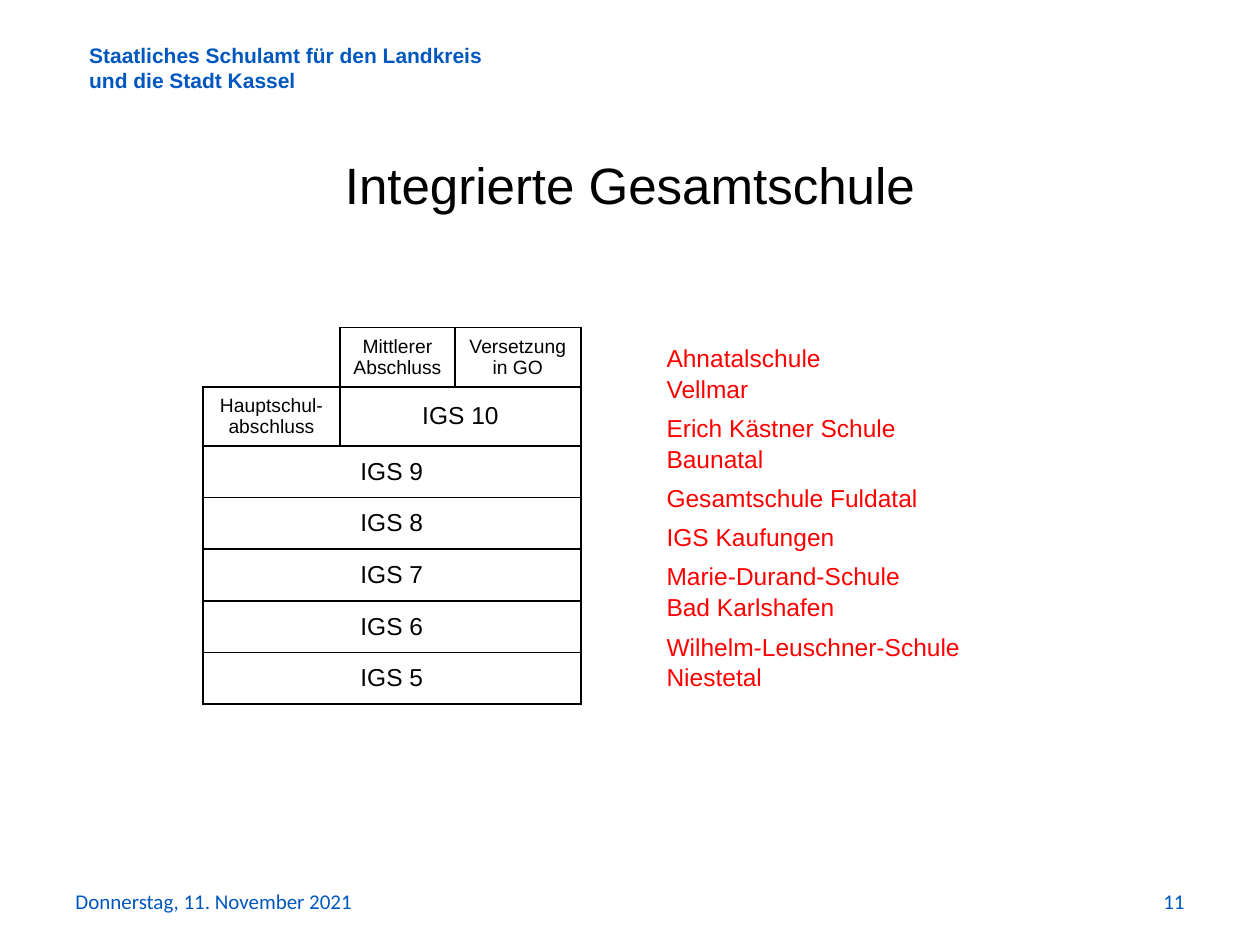
from dataclasses import dataclass

from lxml.etree import SubElement
from pptx import Presentation
from pptx.dml.color import RGBColor
from pptx.enum.text import MSO_ANCHOR, PP_ALIGN
from pptx.oxml.ns import qn
from pptx.util import Inches, Pt


@dataclass(frozen=True)
class Theme:
    font: str = "Arial"
    foot: str = "Calibri"
    blue: str = "0057C0"
    red: str = "FF0000"
    black: str = "000000"
    title: float = 29.2
    body: float = 14
    label: float = 11
    small: float = 12


T = Theme()
OFFICE = ["Staatliches Schulamt für den Landkreis", "und die Stadt Kassel"]
SCHOOLS = [
    ["Ahnatalschule", "Vellmar"],
    ["Erich Kästner Schule", "Baunatal"],
    ["Gesamtschule Fuldatal"],
    ["IGS Kaufungen"],
    ["Marie-Durand-Schule", "Bad Karlshafen"],
    ["Wilhelm-Leuschner-Schule", "Niestetal"],
]


def write(frame, text, size=T.body, color=T.black, font=T.font, bold=False,
          align=PP_ALIGN.LEFT, anchor=MSO_ANCHOR.TOP, gap=0, line=None):
    """Write groups of lines; gap is the space between groups."""
    frame.word_wrap = True
    frame.vertical_anchor = anchor
    groups = [[text]] if isinstance(text, str) else text
    first = True
    for group in groups:
        for i, words in enumerate(group):
            para = frame.paragraphs[0] if first else frame.add_paragraph()
            para.alignment = align
            para.space_before = Pt(gap if i == 0 and not first else 0)
            if line:
                para.line_spacing = line
            run = para.add_run()
            run.text = words
            run.font.size = Pt(size)
            run.font.name = font
            run.font.bold = bold
            run.font.color.rgb = RGBColor.from_string(color)
            first = False


def add_text(slide, box, text, **form):
    shape = slide.shapes.add_textbox(*map(Inches, box))
    write(shape.text_frame, text, **form)
    return shape.text_frame


def add_title(slide, box, text):
    title = slide.shapes.title
    title.left, title.top, title.width, title.height = map(Inches, box)
    write(title.text_frame, text, size=T.title, align=PP_ALIGN.CENTER)


def add_footer(slide, box):
    left, top, width, height = box
    form = dict(size=T.small, color=T.blue, font=T.foot,
                anchor=MSO_ANCHOR.MIDDLE)
    add_text(slide, (left, top, 3.08, height),
             "Donnerstag, 11. November 2021", **form)
    add_text(slide, (left + width - 2.33, top, 2.33, height), "11",
             align=PP_ALIGN.RIGHT, **form)


def add_schools(slide, box):
    frame = add_text(slide, box, SCHOOLS, color=T.red, gap=4.8, line=1.05)
    frame.margin_left = frame.margin_right = Inches(0.21)
    frame.margin_top = frame.margin_bottom = Inches(0.11)


def set_edges(cell, edges):
    props = cell._tc.get_or_add_tcPr()
    # Borders come before the fill in the cell properties
    for i, side in enumerate("LRTB"):
        edge = SubElement(props, qn(f"a:ln{side}"), w=str(Pt(1)))
        if side in edges:
            fill = SubElement(edge, qn("a:solidFill"))
            SubElement(fill, qn("a:srgbClr"), val=T.black)
        else:
            SubElement(edge, qn("a:noFill"))
        props.insert(i, edge)


def add_grades(slide, box):
    cols = [1.09, 0.91, 1]
    rows = [0.47] * 2 + [0.41] * 5
    table = slide.shapes.add_table(
        len(rows), len(cols), *map(Inches, box)).table
    table.first_row = table.horz_banding = False
    for col, width in zip(table.columns, cols):
        col.width = Inches(width)
    for row, height in zip(table.rows, rows):
        row.height = Inches(height)

    # Plain cells, with the top left corner open
    for r in range(len(rows)):
        for c in range(len(cols)):
            cell = table.cell(r, c)
            cell.fill.background()
            set_edges(cell, "RB" if r == c == 0 else "LRTB")
            cell.margin_left = cell.margin_right = Inches(0.08)

    def fill(r, c, text, size=T.body, last=None):
        cell = table.cell(r, c)
        if last:
            cell.merge(table.cell(r, last))
        write(cell.text_frame, text, size=size, align=PP_ALIGN.CENTER)
        cell.vertical_anchor = MSO_ANCHOR.MIDDLE

    # Leaving certificates, then one row for each year
    fill(0, 1, "Mittlerer Abschluss", T.label)
    fill(0, 2, "Versetzung in GO", T.label)
    fill(1, 0, "Hauptschul-abschluss", T.label)
    for r in range(1, len(rows)):
        fill(r, 1 if r == 1 else 0, f"IGS {11 - r}", last=2)


def main():
    deck = Presentation()
    deck.slide_width, deck.slide_height = Inches(10), Inches(7.5)
    slide = deck.slides.add_slide(deck.slide_layouts[5])
    add_text(slide, (0.61, 0.29, 4.24, 0.5), [OFFICE],
             size=T.small, color=T.blue, bold=True)
    add_footer(slide, (0.5, 6.95, 9, 0.4))
    add_title(slide, (0.5, 1.17, 9, 0.77), "Integrierte Gesamtschule")
    add_schools(slide, (5.08, 2.6, 3.52, 3.14))
    add_grades(slide, (1.61, 2.6, 3, 2.99))
    deck.save("out.pptx")


if __name__ == "__main__":
    main()
